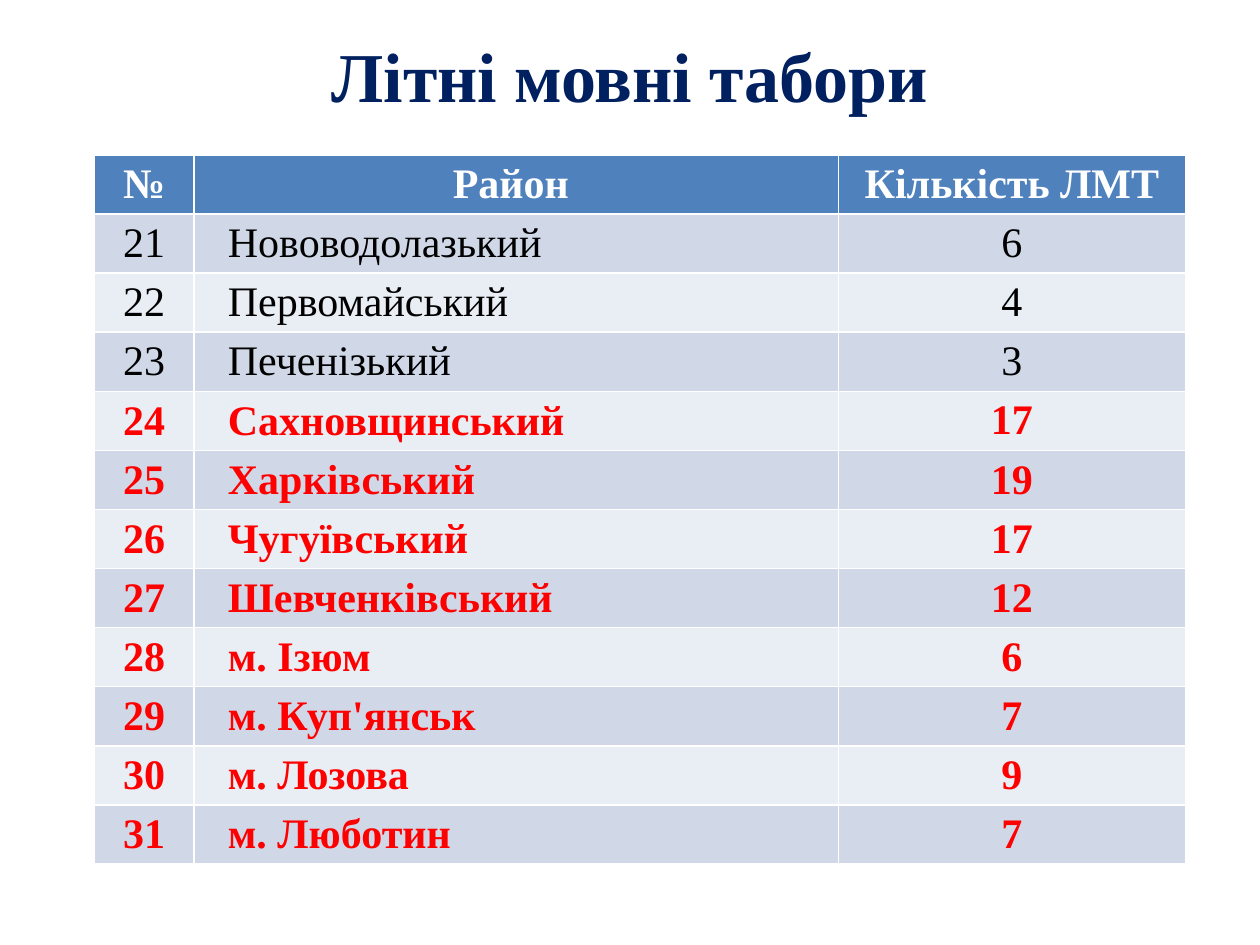
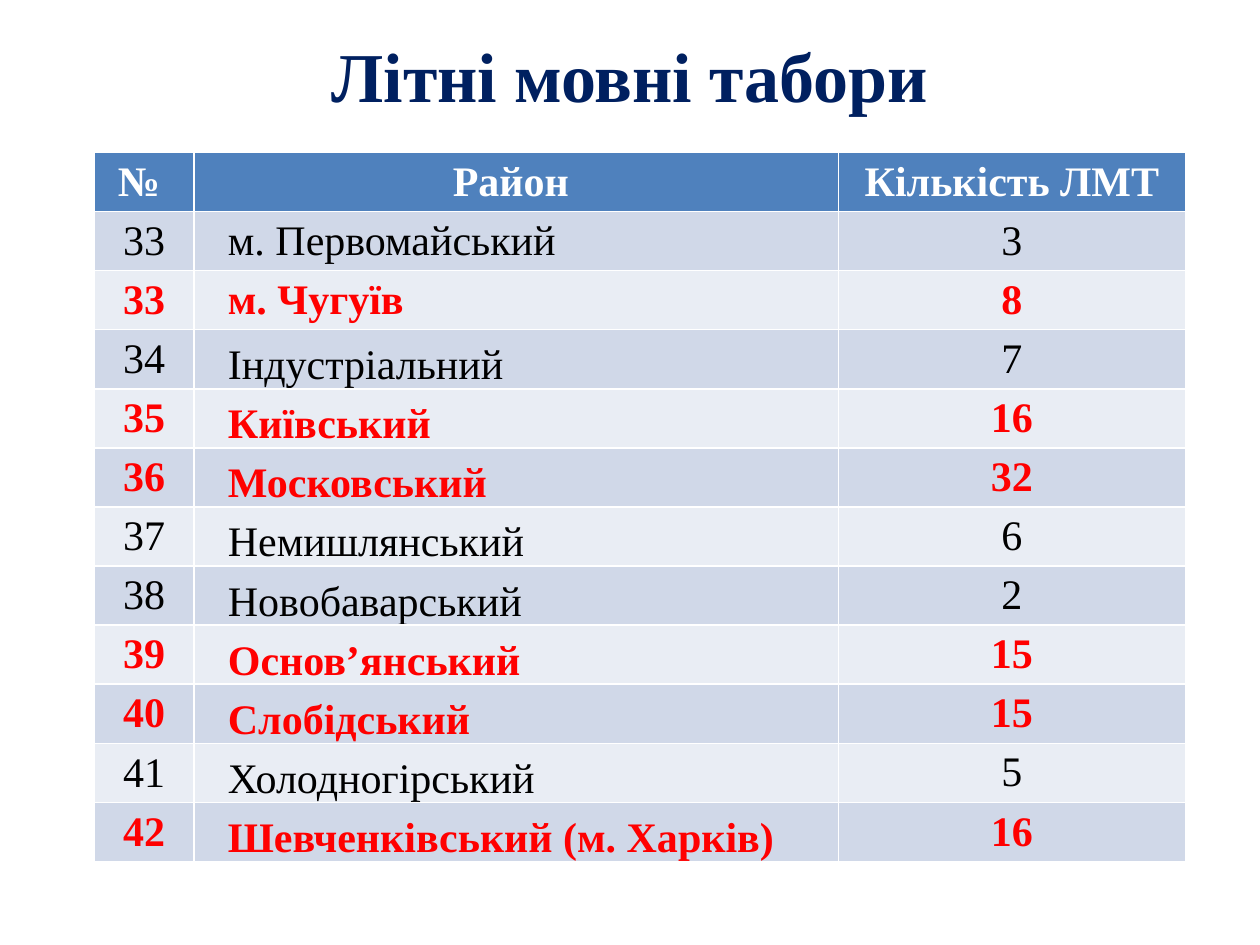
from dataclasses import dataclass

import pptx
import pptx.dml.color
import pptx.enum.text
import pptx.util

Inches = pptx.util.Inches
RGB = pptx.dml.color.RGBColor.from_string
ALIGN = pptx.enum.text.PP_ALIGN
ANCHOR = pptx.enum.text.MSO_ANCHOR


@dataclass(frozen=True)
class Theme:
    font: str = "Times New Roman"
    title_size: int = 40
    table_size: int = 24
    title: str = "002060"
    header: str = "FFFFFF"
    header_fill: str = "4F81BD"
    band_fills: tuple = ("D0D8E8", "E9EDF4")
    plain: str = "000000"
    highlight: str = "FF0000"


THEME = Theme()
SLIDE_WIDTH, SLIDE_HEIGHT = Inches(10), Inches(7.5)
TITLE_BOX = (0, 0, SLIDE_WIDTH, Inches(1.18))
TABLE_LEFT, TABLE_WIDTH, TABLE_HEIGHT = Inches(0.75), Inches(8.66), Inches(6)
COLUMN_WIDTHS = (0.79, 5.12, 2.76)
HEADER_HEIGHT, ROW_HEIGHT = Inches(0.25), Inches(0.41)
NAME_INDENT = Inches(0.2)
TIGHT = {
    "margin_left": Inches(0.07),
    "margin_right": Inches(0.07),
    "margin_top": 0,
    "margin_bottom": 0,
}
NUMBER_CELL = {**TIGHT, "vertical_anchor": ANCHOR.MIDDLE}

TITLE = "Літні мовні табори"
DISTRICTS = [
    (21, "Нововодолазький", 6),
    (22, "Первомайський", 4),
    (23, "Печенізький", 3),
    (24, "Сахновщинський", 17),
    (25, "Харківський", 19),
    (26, "Чугуївський", 17),
    (27, "Шевченківський", 12),
    (28, "м. Ізюм", 6),
    (29, "м. Куп'янськ", 7),
    (30, "м. Лозова", 9),
    (31, "м. Люботин", 7),
]
CITY_DISTRICTS = [
    (33, "м. Первомайський", 3),
    (33, "м. Чугуїв", 8),
    (34, "Індустріальний", 7),
    (35, "Київський", 16),
    (36, "Московський", 32),
    (37, "Немишлянський", 6),
    (38, "Новобаварський", 2),
    (39, "Основ’янський", 15),
    (40, "Слобідський", 15),
    (41, "Холодногірський", 5),
    (42, "Шевченківський (м. Харків)", 16),
]
CAMP_SLIDES = [
    {
        "number_heading": "№",
        "table_top": Inches(1.23),
        "districts": DISTRICTS,
        "highlighted": range(3, 11),
        "bottom_from": len(DISTRICTS),
    },
    {
        "number_heading": "№ ",
        "table_top": Inches(1.21),
        "districts": CITY_DISTRICTS,
        "highlighted": (1, 3, 4, 7, 8, 10),
        "bottom_from": 2,
    },
]


def apply(target, values):
    for name, value in values.items():
        setattr(target, name, value)


def write(frame, text, size, color, bold, align=ALIGN.CENTER):
    paragraph = frame.paragraphs[0]
    paragraph.alignment = align
    run = paragraph.add_run()
    run.text = str(text)
    apply(run.font, {"name": THEME.font, "size": pptx.util.Pt(size), "bold": bold})
    run.font.color.rgb = RGB(color)
    return paragraph


def fill_cell(cell, text, fill, color, bold, align=ALIGN.CENTER, layout=None):
    cell.fill.solid()
    cell.fill.fore_color.rgb = RGB(fill)
    apply(cell, layout or {})
    return write(cell.text_frame, text, THEME.table_size, color, bold, align)


def place_title(slide, box):
    title = slide.shapes.title
    apply(title, dict(zip(("left", "top", "width", "height"), box)))
    title.text_frame.vertical_anchor = ANCHOR.MIDDLE
    write(title.text_frame, TITLE, THEME.title_size, THEME.title, True)


def place_camps(slide, box, number_heading, districts, highlighted, bottom_from):
    frame = slide.shapes.add_table(len(districts) + 1, len(COLUMN_WIDTHS), *box)
    camps = frame.table
    for column, share in zip(camps.columns, COLUMN_WIDTHS):
        column.width = int(box[2] * share / sum(COLUMN_WIDTHS))
    for index, row in enumerate(camps.rows):
        row.height = ROW_HEIGHT if index else HEADER_HEIGHT
    frame.height = box[3]

    headings = (number_heading, "Район ", "Кількість ЛМТ")
    for cell, heading in zip(camps.rows[0].cells, headings):
        fill_cell(cell, heading, THEME.header_fill, THEME.header, True)

    for index, (number, district, count) in enumerate(districts):
        bold = index in highlighted
        style = {
            "fill": THEME.band_fills[index % 2],
            "color": THEME.highlight if bold else THEME.plain,
            "bold": bold,
        }
        anchor = ANCHOR.BOTTOM if index >= bottom_from else ANCHOR.MIDDLE
        name_cell = {**TIGHT, "vertical_anchor": anchor}
        number_box, name_box, count_box = camps.rows[index + 1].cells
        fill_cell(number_box, number, **style, layout=NUMBER_CELL)
        name = fill_cell(name_box, district, **style, align=ALIGN.LEFT, layout=name_cell)
        properties = name._p.get_or_add_pPr()
        properties.set("marL", "0")
        properties.set("indent", str(NAME_INDENT))
        fill_cell(count_box, count, **style)


def build_camp_slide(deck, table_top, **content):
    slide = deck.slides.add_slide(deck.slide_layouts[5])
    place_title(slide, TITLE_BOX)
    place_camps(slide, (TABLE_LEFT, table_top, TABLE_WIDTH, TABLE_HEIGHT), **content)


def main():
    deck = pptx.Presentation()
    apply(deck, {"slide_width": SLIDE_WIDTH, "slide_height": SLIDE_HEIGHT})
    for camp_slide in CAMP_SLIDES:
        build_camp_slide(deck, **camp_slide)
    deck.save("out.pptx")


if __name__ == "__main__":
    main()
